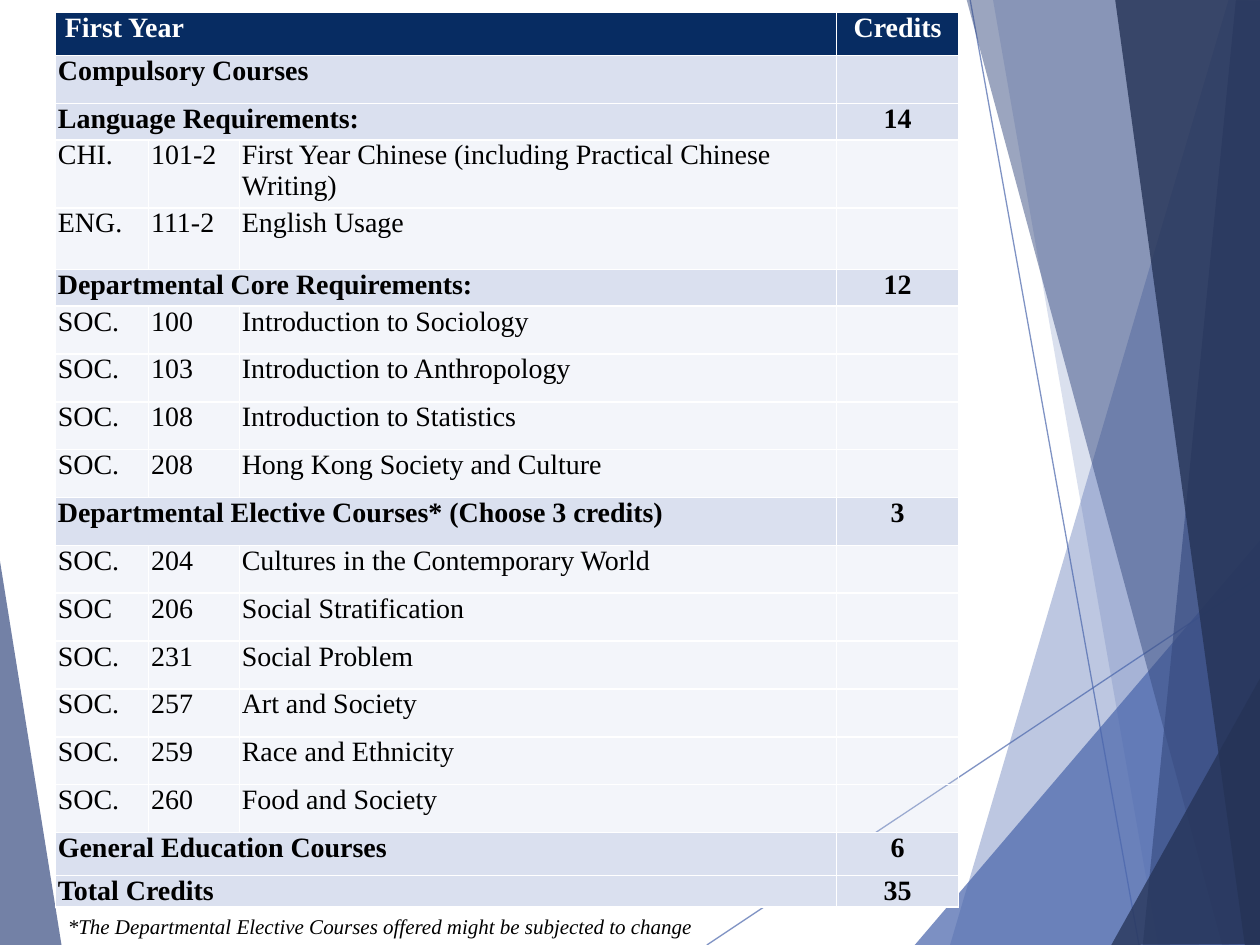
"""Build the first-year course credits slide."""
import typing

import lxml.etree
import pptx
import pptx.dml.color
import pptx.enum.shapes
import pptx.enum.text
import pptx.oxml
import pptx.oxml.ns
import pptx.util

Inches = pptx.util.Inches
COLORS = {
    "white": "FFFFFF", "black": "000000", "blue": "4A66AC", "navy": "384C81",
    "midnight": "253356", "header": "072C62", "band": "DAE0EF",
}
FONT = "Times New Roman"
COLUMN_WIDTHS = (0.74, 0.72, 4.74, 0.97)


class Facet(typing.NamedTuple):
    points: tuple
    color: str
    alpha: int


class Ray(typing.NamedTuple):
    start: tuple
    end: tuple


class Heading(typing.NamedTuple):
    title: str
    credits: str = ""
    height: float = 0.38
    fill: str = "band"
    ink: str = "black"


class Course(typing.NamedTuple):
    subject: str
    number: str
    title: str
    height: float = 0.38


RAYS = (Ray((5.61, 7.5), (10.01, 4.57)), Ray((7.7, 0), (9.04, 7.5)))
FACETS = (
    Facet(((9.75, 0), (7.54, 7.5), (10.02, 7.51), (10.01, 0.01)), "blue", 36),
    Facet(((7.88, -0.01), (9.19, 7.5), (10.01, 7.5), (10.01, -0.01)), "blue", 20),
    Facet(((7.26, 7.5), (10, 4.29), (10.01, 7.5)), "blue", 72),
    Facet(((7.67, -0.01), (9.7, 7.5), (10.01, 7.49), (10.01, -0.01)), "navy", 50),
    Facet(((9.81, -0.01), (9.07, 7.5), (10.01, 7.5), (10, -0.01)), "navy", 66),
    Facet(((8.85, -0.01), (9.88, 7.5), (10.02, 7.5), (10, -0.01)), "midnight", 80),
    Facet(((8.82, 7.5), (10.02, 5.35), (10.02, 7.49)), "midnight", 76),
    Facet(((-0.01, 4.39), (0.49, 7.51), (-0.01, 7.5)), "navy", 70),
)
ROWS = (
    Heading(" First Year", "Credits", 0.34, "header", "white"),
    Heading("Compulsory Courses"),
    Heading("Language Requirements:", "14", 0.29),
    Course("CHI.", "101-2", "First Year Chinese (including Practical Chinese Writing)", 0.54),
    Course("ENG.", "111-2", "English Usage", 0.49),
    Heading("Departmental Core Requirements:", "12", 0.29),
    Course("SOC.", "100", "Introduction to Sociology"),
    Course("SOC.", "103", "Introduction to Anthropology"),
    Course("SOC.", "108", "Introduction to Statistics"),
    Course("SOC.", "208", "Hong Kong Society and Culture"),
    Heading("Departmental Elective Courses* (Choose 3 credits)", "3"),
    Course("SOC.", "204", "Cultures in the Contemporary World"),
    Course("SOC", "206", "Social Stratification"),
    Course("SOC.", "231", "Social Problem"),
    Course("SOC.", "257", "Art and Society"),
    Course("SOC.", "259", "Race and Ethnicity"),
    Course("SOC.", "260", "Food and Society"),
    Heading("General Education Courses", "6", 0.34),
    Heading("Total Credits", "35", 0.25),
)


def rgb(color: str) -> pptx.dml.color.RGBColor:
    """Look up a named colour."""
    return pptx.dml.color.RGBColor.from_string(COLORS[color])


def set_alpha(element: typing.Any, percent: int) -> None:
    """Make every colour inside an element translucent."""
    for color in element.iter(pptx.oxml.ns.qn("a:srgbClr")):
        lxml.etree.SubElement(color, pptx.oxml.ns.qn("a:alpha"), val=str(percent * 1000))


def write(frame: typing.Any, text: str, *, size: float = 16, color: str = "black",
          bold: bool = False, italic: bool = False, centered: bool = False) -> None:
    """Write one formatted paragraph into a text frame."""
    paragraph = frame.paragraphs[0]
    if centered:
        paragraph.alignment = pptx.enum.text.PP_ALIGN.CENTER
    run = paragraph.add_run()
    run.text = text
    run.font.name = FONT
    run.font.size = pptx.util.Pt(size)
    run.font.bold = bold
    run.font.italic = italic
    run.font.color.rgb = rgb(color)


def draw_ray(slide: typing.Any, ray: Ray) -> None:
    """Draw a thin translucent line."""
    ends = [Inches(value) for value in ray.start + ray.end]
    line = slide.shapes.add_connector(pptx.enum.shapes.MSO_CONNECTOR.STRAIGHT, *ends)
    line.line.color.rgb = rgb("blue")
    line.line.width = pptx.util.Pt(0.75)
    properties = line._element.spPr
    set_alpha(properties, 70)
    lxml.etree.SubElement(properties, pptx.oxml.ns.qn("a:effectLst"))


def draw_facet(slide: typing.Any, facet: Facet) -> None:
    """Draw a translucent polygon."""
    first, *others = [(Inches(x), Inches(y)) for x, y in facet.points]
    builder = slide.shapes.build_freeform(*first)
    builder.add_line_segments(others, close=True)
    polygon = builder.convert_to_shape()
    polygon.shadow.inherit = False
    polygon.fill.solid()
    polygon.fill.fore_color.rgb = rgb(facet.color)
    polygon.line.fill.background()
    set_alpha(polygon._element.spPr, facet.alpha)


def style_cell(cell: typing.Any, fill: str, alpha: int) -> None:
    """Set the margins, fill and white borders of a cell."""
    cell.margin_left = cell.margin_right = Inches(0.02)
    cell.margin_top = cell.margin_bottom = 0
    cell.fill.solid()
    cell.fill.fore_color.rgb = rgb(fill)
    properties = cell._tc.get_or_add_tcPr()
    set_alpha(properties, alpha)
    for index, side in enumerate("LRTB"):
        properties.insert(index, pptx.oxml.parse_xml(
            f'<a:ln{side} {pptx.oxml.ns.nsdecls("a")} w="12700"><a:solidFill>'
            f'<a:srgbClr val="{COLORS["white"]}"/></a:solidFill></a:ln{side}>'))


def draw_courses(slide: typing.Any) -> None:
    """Draw the table of courses and credits."""
    table = slide.shapes.add_table(
        len(ROWS), len(COLUMN_WIDTHS), Inches(0.44), Inches(0.1),
        Inches(sum(COLUMN_WIDTHS)), Inches(sum(row.height for row in ROWS))).table
    table.first_row = table.horz_banding = False
    for column, width in zip(table.columns, COLUMN_WIDTHS):
        column.width = Inches(width)
    for index, (row, entry) in enumerate(zip(table.rows, ROWS)):
        row.height = Inches(entry.height)
        cells = list(row.cells)
        is_heading = isinstance(entry, Heading)
        for cell in cells:
            style_cell(cell, entry.fill if is_heading else "band", 100 if is_heading else 30)
        if is_heading:
            cells[0].merge(table.cell(index, 2))
            write(cells[0].text_frame, entry.title, color=entry.ink, bold=True)
            if entry.credits:
                write(cells[3].text_frame, entry.credits, color=entry.ink,
                      bold=True, centered=True)
        else:
            for cell, text in zip(cells, (entry.subject, entry.number, entry.title)):
                write(cell.text_frame, text)


def main() -> None:
    """Assemble and save the slide."""
    deck = pptx.Presentation()
    deck.slide_width, deck.slide_height = Inches(10), Inches(7.5)
    slide = deck.slides.add_slide(deck.slide_layouts[6])
    for ray in RAYS:
        draw_ray(slide, ray)
    for facet in FACETS:
        draw_facet(slide, facet)
    draw_courses(slide)
    footnote = slide.shapes.add_textbox(Inches(0.44), Inches(7.2), Inches(5.93), Inches(0.3))
    footnote.text_frame.word_wrap = True
    write(footnote.text_frame, "*The Departmental Elective Courses offered might be "
          "subjected to change", size=12, italic=True)
    deck.save("out.pptx")


if __name__ == "__main__":
    main()
